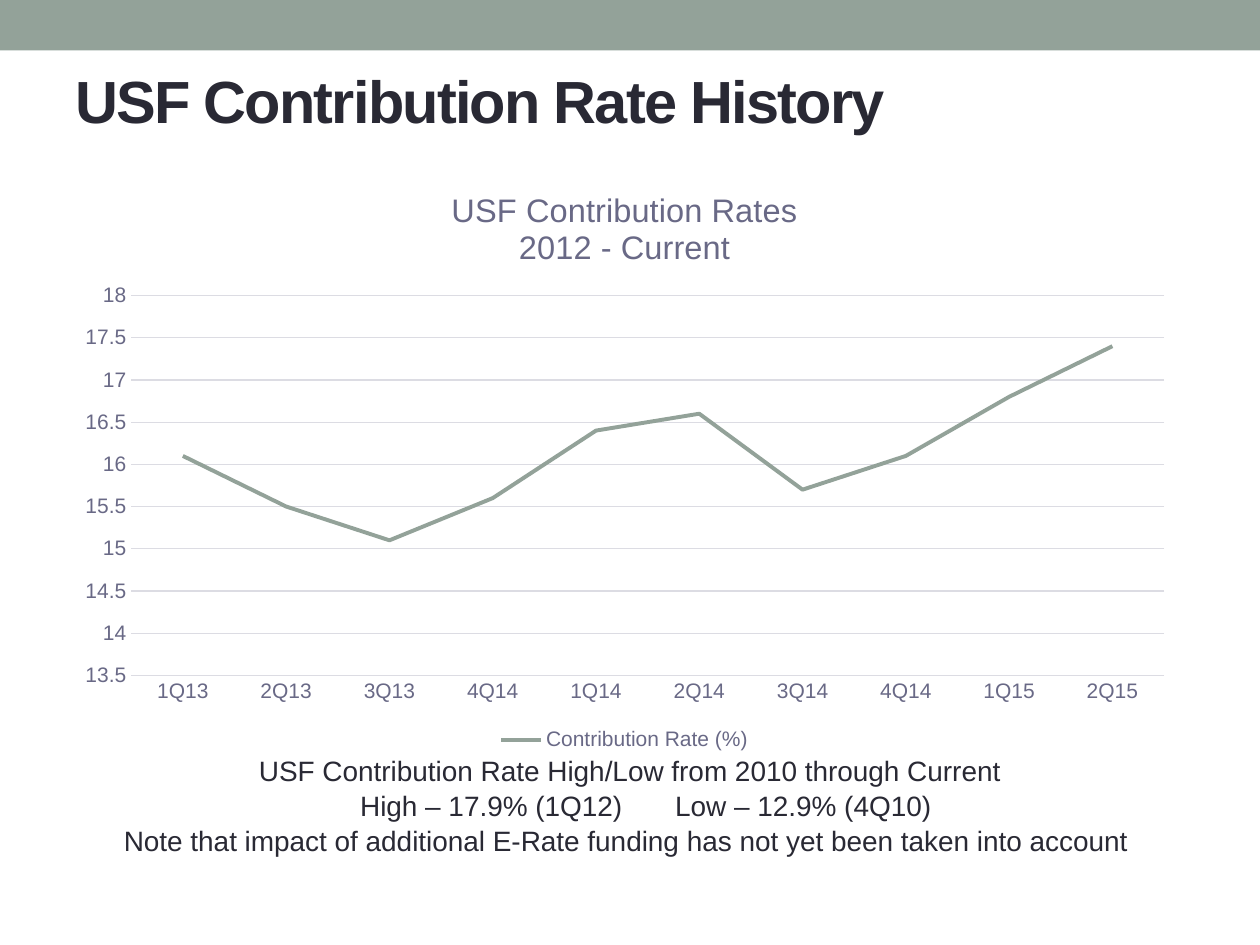
from pptx import Presentation
from pptx.chart.data import CategoryChartData
from pptx.dml.color import RGBColor
from pptx.enum.chart import XL_CHART_TYPE, XL_LEGEND_POSITION, XL_MARKER_STYLE, XL_TICK_MARK
from pptx.enum.shapes import MSO_SHAPE
from pptx.enum.text import MSO_ANCHOR, PP_ALIGN
from pptx.util import Pt

SAGE = RGBColor(0x93, 0xA2, 0x99)
INK = RGBColor(0x29, 0x29, 0x34)
MUTED = RGBColor(0x69, 0x69, 0x86)
GRID = RGBColor(0xDC, 0xDC, 0xE3)
FONT = "Arial"

LINE_CHART = XL_CHART_TYPE.LINE
BOTTOM = XL_LEGEND_POSITION.BOTTOM
NO_MARKER = XL_MARKER_STYLE.NONE
NO_TICK = XL_TICK_MARK.NONE
RECTANGLE = MSO_SHAPE.RECTANGLE
MIDDLE = MSO_ANCHOR.MIDDLE
CENTER = PP_ALIGN.CENTER

RATES = {
    "1Q13": 16.1, "2Q13": 15.5, "3Q13": 15.1, "4Q14": 15.6, "1Q14": 16.4,
    "2Q14": 16.6, "3Q14": 15.7, "4Q14 ": 16.1, "1Q15": 16.8, "2Q15": 17.4,
}
NOTES = [
    ("USF Contribution Rate High/Low from 2010 through Current", 0),
    ("High – 17.9% (1Q12)\tLow – 12.9% (4Q10)", 18),
    ("Note that impact of additional E-Rate funding has not yet been taken into account ", 0),
]


def style_font(font, size, color, bold=False):
    """Apply the slide's typeface with a size and colour."""
    font.name = FONT
    font.size = Pt(size)
    font.bold = bold
    font.color.rgb = color


def add_band(slide, left, top, width, height):
    """Draw the coloured band across the top."""
    band = slide.shapes.add_shape(RECTANGLE, Pt(left), Pt(top), Pt(width), Pt(height))
    band.shadow.inherit = False
    band.fill.solid()
    band.fill.fore_color.rgb = SAGE
    band.line.fill.background()


def add_title(slide, left, top, width, height):
    """Place the slide title."""
    box = slide.shapes.add_textbox(Pt(left), Pt(top), Pt(width), Pt(height))
    frame = box.text_frame
    frame.word_wrap = True
    frame.vertical_anchor = MIDDLE
    run = frame.paragraphs[0].add_run()
    run.text = "USF Contribution Rate History"
    style_font(run.font, 34, INK, bold=True)
    run.font._element.set("spc", "-100")


def style_axis(axis, line):
    """Style the labels of an axis and one of its lines."""
    axis.major_tick_mark = NO_TICK
    axis.minor_tick_mark = NO_TICK
    style_font(axis.tick_labels.font, 12, MUTED)
    line.color.rgb = GRID
    line.width = Pt(0.75)


def add_rate_chart(slide, left, top, width, height):
    """Place the line chart of contribution rates."""
    data = CategoryChartData()
    data.categories = [quarter.strip() for quarter in RATES]
    data.add_series("Contribution Rate (%)", RATES.values())
    chart = slide.shapes.add_chart(
        LINE_CHART, Pt(left), Pt(top), Pt(width), Pt(height), data).chart
    style_font(chart.font, 10, INK)

    title = chart.chart_title.text_frame
    for index, text in enumerate(("USF Contribution Rates", "2012 - Current")):
        paragraph = title.add_paragraph() if index else title.paragraphs[0]
        run = paragraph.add_run()
        run.text = text
        style_font(run.font, 18.6, MUTED)
    chart.chart_title.include_in_layout = False

    chart.has_legend = True
    chart.legend.position = BOTTOM
    chart.legend.include_in_layout = False
    style_font(chart.legend.font, 12, MUTED)

    style_axis(chart.category_axis, chart.category_axis.format.line)
    value_axis = chart.value_axis
    style_axis(value_axis, value_axis.major_gridlines.format.line)
    value_axis.format.line.fill.background()
    value_axis.minimum_scale = 13.5
    value_axis.maximum_scale = 18
    value_axis.major_unit = 0.5

    plot = chart.plots[0]
    plot.vary_by_categories = False
    series = plot.series[0]
    series.smooth = False
    series.marker.style = NO_MARKER
    series.format.line.color.rgb = SAGE
    series.format.line.width = Pt(2.25)


def add_notes(slide, left, top, width, height):
    """Place the centred remarks below the chart."""
    box = slide.shapes.add_textbox(Pt(left), Pt(top), Pt(width), Pt(height))
    frame = box.text_frame
    frame.word_wrap = False
    frame.margin_left = frame.margin_right = Pt(4.5)
    frame.margin_top = frame.margin_bottom = Pt(4.5)
    for index, (text, indent) in enumerate(NOTES):
        paragraph = frame.add_paragraph() if index else frame.paragraphs[0]
        paragraph.alignment = CENTER
        paragraph.space_before = Pt(1)
        paragraph._p.get_or_add_pPr().set("marL", str(Pt(indent)))
        run = paragraph.add_run()
        run.text = text
        style_font(run.font, 16, INK)


def main():
    """Build and save the presentation."""
    presentation = Presentation()
    presentation.slide_width = Pt(720)
    presentation.slide_height = Pt(540)
    slide = presentation.slides.add_slide(presentation.slide_layouts[6])
    add_band(slide, 0, 0, 720, 28.8)
    add_title(slide, 36, 18, 648, 78)
    add_rate_chart(slide, 36, 96, 642, 336)
    add_notes(slide, 48, 426, 624, 72)
    presentation.save("out.pptx")


if __name__ == "__main__":
    main()
